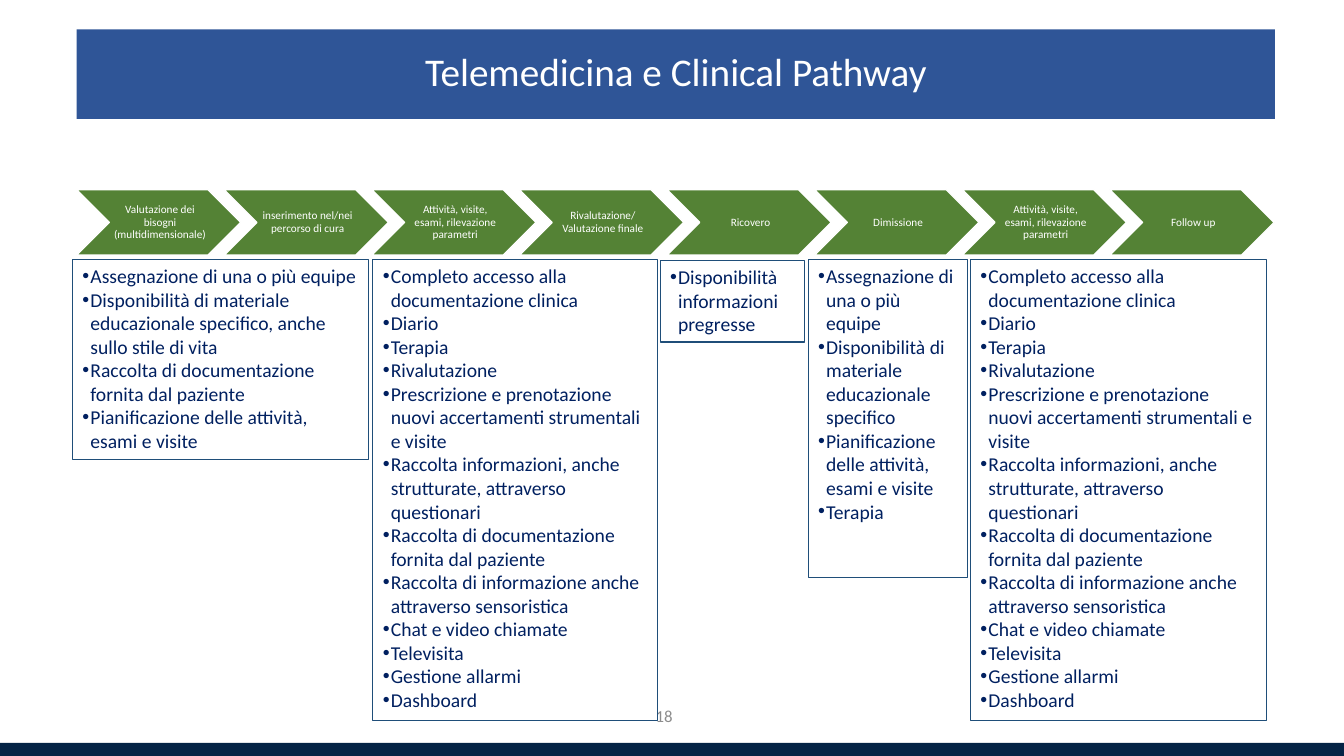
from lxml import etree
from pptx import Presentation
from pptx.dml.color import RGBColor
from pptx.enum.shapes import MSO_SHAPE as SHAPE
from pptx.enum.text import MSO_ANCHOR as ANCHOR, MSO_AUTO_SIZE as AUTO, PP_ALIGN as ALIGN
from pptx.oxml.ns import qn
from pptx.util import Cm, Pt

COLORS = {
    "title": "2F5597", "step": "548235", "footer": "042345",
    "border": "1F4E79", "text": "002060", "number": "8C8C8C", "white": "FFFFFF",
}
FONT = "Calibri"
TITLE = "Telemedicina e Clinical Pathway"
PAGE_NUMBER = "18"
VISITS = "Attività, visite, esami, rilevazione parametri"
STEPS = [
    "Valutazione dei bisogni (multidimensionale)",
    "inserimento nel/nei percorso di cura",
    VISITS,
    "Rivalutazione/ Valutazione finale",
    "Ricovero",
    "Dimissione",
    VISITS,
    "Follow up",
]
TEAM = "Assegnazione di una o più equipe"
DOCUMENTS = "Raccolta di documentazione fornita dal paziente"
PLANNING = "Pianificazione delle attività, esami e visite"
INTAKE = [
    TEAM,
    "Disponibilità di materiale educazionale specifico, anche sullo stile di vita",
    DOCUMENTS,
    PLANNING,
]
CARE = [
    "Completo accesso alla documentazione clinica",
    "Diario",
    "Terapia",
    "Rivalutazione",
    "Prescrizione e prenotazione nuovi accertamenti strumentali e visite",
    "Raccolta informazioni, anche strutturate, attraverso questionari",
    DOCUMENTS,
    "Raccolta di informazione anche attraverso sensoristica",
    "Chat e video chiamate",
    "Televisita",
    "Gestione allarmi",
    "Dashboard",
]
ADMISSION = ["Disponibilità informazioni pregresse"]
DISCHARGE = [
    TEAM,
    "Disponibilità di materiale educazionale specifico",
    PLANNING,
    "Terapia",
]
# (left, top, width, height) in cm, then the bullets
SERVICES = [
    ((1.83, 6.53, 7.47, 5.05), INTAKE),
    ((9.4, 6.53, 7.16, 11.63), CARE),
    ((16.64, 6.56, 3.63, 2.06), ADMISSION),
    ((20.37, 6.53, 4.01, 8.03), DISCHARGE),
    ((24.46, 6.53, 7.47, 11.63), CARE),
]
SLIDE_W, SLIDE_H = 33.87, 19.05
FOOTER_H = 0.33
STEP_LEFT, STEP_TOP, STEP_W, STEP_H, STEP_PITCH = 1.93, 4.78, 4.14, 1.65, 3.72


def rgb(name):
    return RGBColor.from_string(COLORS[name])


def add_block(slide, kind, box, fill=None, line=None, line_width=0.75):
    sp = slide.shapes.add_shape(kind, *map(Cm, box))
    sp.shadow.inherit = False
    if fill:
        sp.fill.solid()
        sp.fill.fore_color.rgb = rgb(fill)
    else:
        sp.fill.background()
    if line:
        sp.line.color.rgb = rgb(line)
        sp.line.width = Pt(line_width)
    else:
        sp.line.fill.background()
    return sp


def add_run(p, text, size, color):
    r = p.add_run()
    r.text = text
    r.font.name, r.font.size = FONT, Pt(size)
    r.font.color.rgb = rgb(color)


def write_centered(sp, text, size, color, spacing=1.0):
    tf = sp.text_frame
    tf.word_wrap = True
    tf.vertical_anchor = ANCHOR.MIDDLE
    p = tf.paragraphs[0]
    p.alignment = ALIGN.CENTER
    p.line_spacing = spacing
    add_run(p, text, size, color)


def write_bullets(sp, items):
    tf = sp.text_frame
    tf.word_wrap = True
    tf.auto_size = AUTO.SHAPE_TO_FIT_TEXT
    tf.vertical_anchor = ANCHOR.TOP
    for i, item in enumerate(items):
        p = tf.add_paragraph() if i else tf.paragraphs[0]
        p.alignment = ALIGN.LEFT
        pPr = p._p.get_or_add_pPr()
        pPr.set("marL", str(Cm(0.2)))
        pPr.set("indent", str(-Cm(0.2)))
        etree.SubElement(pPr, qn("a:buFont")).set("typeface", "Arial")
        etree.SubElement(pPr, qn("a:buChar")).set("char", "•")
        add_run(p, item, 14, "text")


def main():
    prs = Presentation()
    prs.slide_width, prs.slide_height = Cm(SLIDE_W), Cm(SLIDE_H)
    slide = prs.slides.add_slide(prs.slide_layouts[6])

    add_block(slide, SHAPE.RECTANGLE, (0, SLIDE_H - FOOTER_H, SLIDE_W, FOOTER_H), "footer")
    number = slide.shapes.add_textbox(Cm(12.93), Cm(17.53), Cm(7.62), Cm(1.02))
    write_centered(number, PAGE_NUMBER, 12, "number")

    for i, step in enumerate(STEPS):
        box = (STEP_LEFT + i * STEP_PITCH, STEP_TOP, STEP_W, STEP_H)
        sp = add_block(slide, SHAPE.CHEVRON, box, "step", "white", 1)
        tf = sp.text_frame
        tf.margin_left = Cm(0.1)
        tf.margin_right = tf.margin_top = tf.margin_bottom = Cm(0.03)
        write_centered(sp, step, 8, "white", 0.9)

    title = add_block(slide, SHAPE.RECTANGLE, (1.93, 0.74, 30.2, 2.26), "title")
    write_centered(title, TITLE, 28, "white", 0.9)

    for box, items in SERVICES:
        write_bullets(add_block(slide, SHAPE.RECTANGLE, box, line="border"), items)

    prs.save("out.pptx")


if __name__ == "__main__":
    main()
